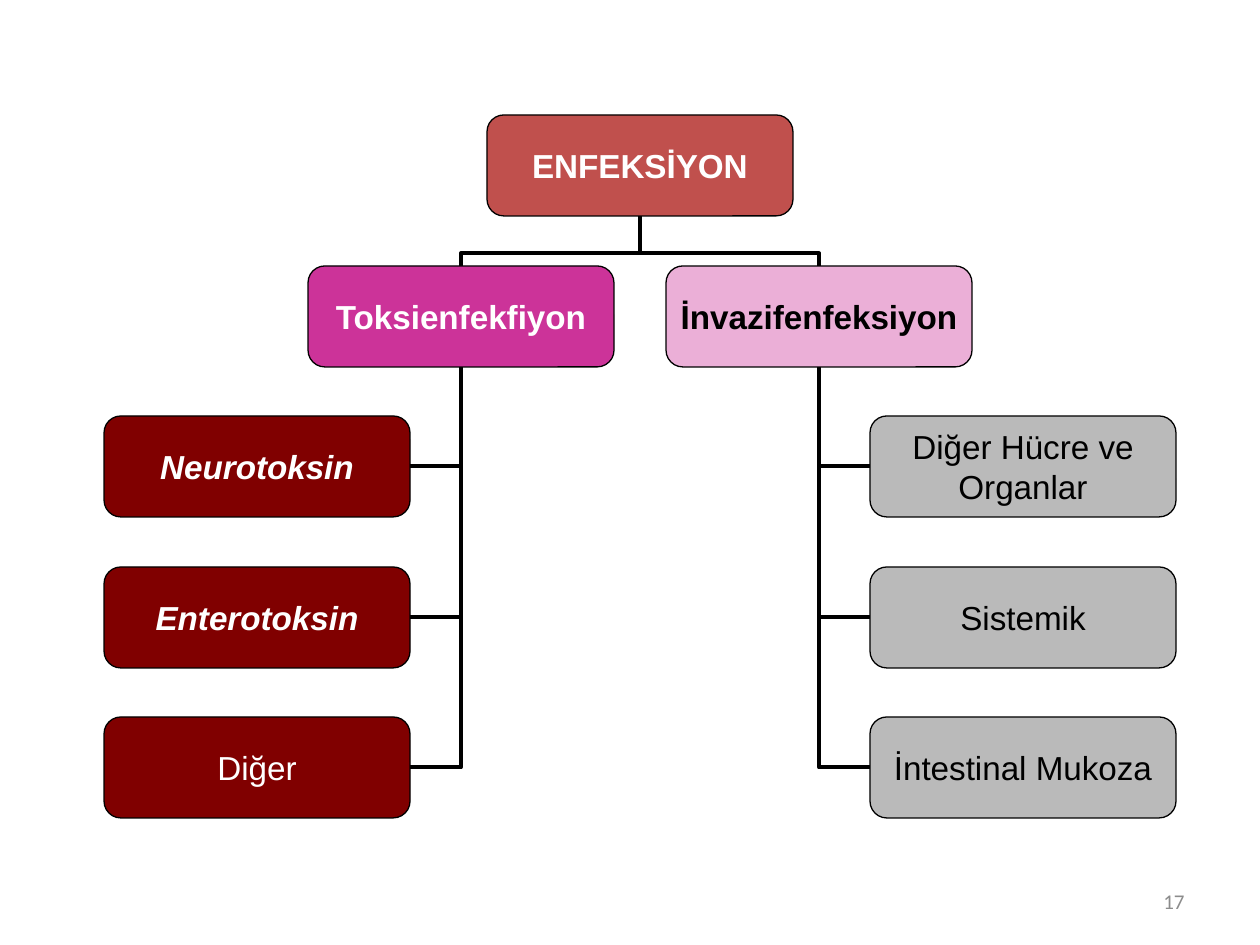
from lxml import etree
from pptx import Presentation
from pptx import util as u
from pptx.dml.color import RGBColor
from pptx.enum import shapes, text
from pptx.oxml import ns

PX = u.Inches(1) / 126
BLACK = RGBColor(0x00, 0x00, 0x00)
WHITE = RGBColor(0xFF, 0xFF, 0xFF)
BRICK = RGBColor(0xC0, 0x50, 0x4D)
MAGENTA = RGBColor(0xCC, 0x33, 0x99)
MAROON = RGBColor(0x80, 0x00, 0x00)
GRAY = RGBColor(0x77, 0x77, 0x77)
NUMBER_GRAY = RGBColor(0x8C, 0x8C, 0x8C)

BOX_WIDTH, BOX_HEIGHT = 306, 101
ROW_TOPS = (115, 266, 416, 567, 717)
ROOT_CENTER = 640
LEAF_GAP = 51  # from a branch's trunk to its leaf boxes

STYLES = {
    "root": dict(fill=BRICK, opacity=100, font=dict(color=WHITE, bold=True)),
    "toxin": dict(fill=MAGENTA, opacity=100, font=dict(color=WHITE, bold=True)),
    "invasive": dict(fill=MAGENTA, opacity=39, font=dict(color=BLACK, bold=True)),
    "toxin leaf": dict(fill=MAROON, opacity=100,
                       font=dict(color=WHITE, bold=True, italic=True)),
    "plain toxin leaf": dict(fill=MAROON, opacity=100, font=dict(color=WHITE)),
    "invasive leaf": dict(fill=GRAY, opacity=50, font=dict(color=BLACK)),
}
ROOT = ("ENFEKSİYON", "root")
BRANCHES = [
    dict(box=("Toksienfekfiyon", "toxin"), center=461, side=-1, leaves=[
        ("Neurotoksin", "toxin leaf"),
        ("Enterotoksin", "toxin leaf"),
        ("Diğer", "plain toxin leaf")]),
    dict(box=("İnvazifenfeksiyon", "invasive"), center=819, side=1, leaves=[
        ("Diğer Hücre ve\nOrganlar", "invasive leaf"),
        ("Sistemik", "invasive leaf"),
        ("İntestinal Mukoza", "invasive leaf")]),
]


def px(*lengths):
    return [u.Emu(round(length * PX)) for length in lengths]


def write(shape, words, align, size, name, color, **font_format):
    frame = shape.text_frame
    frame.text = words
    frame.vertical_anchor = text.MSO_ANCHOR.MIDDLE
    for paragraph in frame.paragraphs:
        paragraph.alignment = align
        font = paragraph.runs[0].font
        font.color.rgb = color
        values = dict(size=u.Pt(size), name=name, **font_format)
        for key, value in values.items():
            setattr(font, key, value)


def add_box(slide, words, style_name, center, row):
    style = STYLES[style_name]
    shape = slide.shapes.add_shape(
        shapes.MSO_SHAPE.ROUNDED_RECTANGLE,
        *px(center - BOX_WIDTH / 2, ROW_TOPS[row], BOX_WIDTH, BOX_HEIGHT))
    shape.shadow.inherit = False
    shape.fill.solid()
    shape.fill.fore_color.rgb = style["fill"]
    if style["opacity"] < 100:
        color = shape._element.spPr.find(".//" + ns.qn("a:srgbClr"))
        etree.SubElement(color, ns.qn("a:alpha"), val=str(style["opacity"] * 1000))
    shape.line.color.rgb = BLACK
    shape.line.width = u.Pt(0.75)
    write(shape, words, text.PP_ALIGN.CENTER, 19, "Arial", **style["font"])
    frame = shape.text_frame
    frame.word_wrap = False
    for side in ("left", "top", "right", "bottom"):
        setattr(frame, "margin_" + side, 0)


def add_elbow(slide, *ends):
    connector = slide.shapes.add_connector(shapes.MSO_CONNECTOR.ELBOW, *px(*ends))
    connector.line.color.rgb = BLACK
    connector.line.width = u.Pt(2.25)
    properties = connector._element.spPr
    etree.SubElement(properties, ns.qn("a:effectLst"))
    return properties


def link_branch(slide, center, side):
    """Join a branch to the root: a three-part elbow turned a quarter."""
    top, bottom = ROW_TOPS[0] + BOX_HEIGHT, ROW_TOPS[1]
    middle_x, middle_y = (ROOT_CENTER + center) / 2, (top + bottom) / 2
    half_drop, half_span = (bottom - top) / 2, abs(center - ROOT_CENTER) / 2
    properties = add_elbow(slide, middle_x + side * half_drop, middle_y - half_span,
                           middle_x - side * half_drop, middle_y + half_span)
    properties.find(ns.qn("a:xfrm")).set("rot", str((180 - side * 90) * 60000))
    guides = properties.find(ns.qn("a:prstGeom")).find(ns.qn("a:avLst"))
    etree.SubElement(guides, ns.qn("a:gd"), name="adj1", fmla="val 25500")


def link_leaf(slide, center, side, row):
    properties = add_elbow(slide, center + side * LEAF_GAP,
                           ROW_TOPS[row] + BOX_HEIGHT / 2,
                           center, ROW_TOPS[1] + BOX_HEIGHT)
    properties.find(ns.qn("a:prstGeom")).set("prst", "bentConnector2")


def main():
    presentation = Presentation()
    presentation.slide_width, presentation.slide_height = px(1260, 945)
    slide = presentation.slides.add_slide(presentation.slide_layouts[6])

    for branch in BRANCHES:
        center, side = branch["center"], branch["side"]
        link_branch(slide, center, side)
        for row in range(2, 2 + len(branch["leaves"])):
            link_leaf(slide, center, side, row)

    add_box(slide, *ROOT, ROOT_CENTER, 0)
    for branch in BRANCHES:
        center = branch["center"]
        add_box(slide, *branch["box"], center, 1)
        leaf_center = center + branch["side"] * (LEAF_GAP + BOX_WIDTH / 2)
        for row, leaf in enumerate(branch["leaves"], start=2):
            add_box(slide, *leaf, leaf_center, row)

    number = slide.shapes.add_textbox(*px(903, 876, 294, 50))
    number.text_frame.word_wrap = True
    write(number, "17", text.PP_ALIGN.RIGHT, 12, "Calibri", NUMBER_GRAY)
    presentation.save("out.pptx")


if __name__ == "__main__":
    main()
